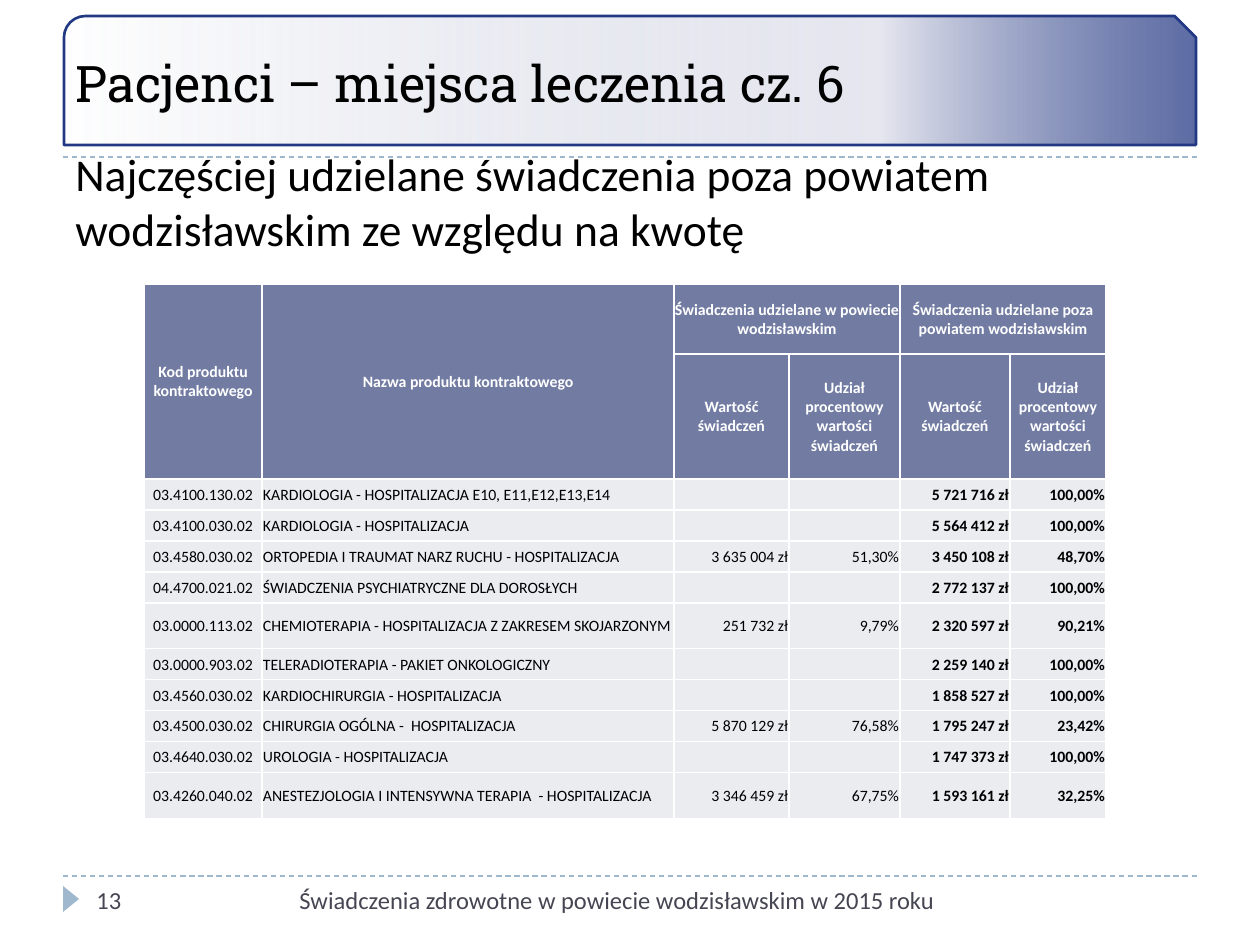
from dataclasses import dataclass

from lxml import etree
from pptx import Presentation
from pptx import util as u
from pptx.dml.color import RGBColor
from pptx.enum import dml, shapes, text
from pptx.oxml import ns

PX_PER_INCH = 126


@dataclass(frozen=True)
class Theme:
    body_font: str = "Calibri"
    title_font: str = "Roboto Slab"
    black: str = "000000"
    white: str = "FFFFFF"
    muted: str = "464653"
    accent: str = "9FB8CD"
    navy: str = "233883"
    header: str = "727CA3"
    row: str = "EBECF0"
    title_size: float = 28.8
    lead_size: float = 26
    footer_size: float = 14
    table_size: float = 9


THEME = Theme()
LEFT, CENTER, RIGHT = text.PP_ALIGN.LEFT, text.PP_ALIGN.CENTER, text.PP_ALIGN.RIGHT

# position, stop colour, opacity (all in percent)
BANNER_STOPS = [(0, THEME.navy, 73), (28, "E6E7EF", 100), (100, "CCD0E0", 0)]

COLUMN_WIDTHS = [118, 412, 115, 111, 110, 96]
HEADER_HEIGHTS = [70, 125]
ROW_HEIGHT, TALL_ROW_HEIGHT = 31, 46
TALL_CODES = {"03.0000.113.02", "03.4260.040.02"}
VALUE, SHARE = "Wartość świadczeń", "Udział procentowy wartości świadczeń"
# row, column, last row, last column, wording
HEADERS = [
    (0, 0, 1, 0, "Kod produktu kontraktowego"),
    (0, 1, 1, 1, "Nazwa produktu kontraktowego"),
    (0, 2, 0, 3, "Świadczenia udzielane w powiecie wodzisławskim"),
    (0, 4, 0, 5, "Świadczenia udzielane poza powiatem wodzisławskim"),
    (1, 2, 1, 2, VALUE),
    (1, 3, 1, 3, SHARE),
    (1, 4, 1, 4, VALUE),
    (1, 5, 1, 5, SHARE),
]
SERVICES = [
    ("03.4100.130.02", "KARDIOLOGIA - HOSPITALIZACJA E10, E11,E12,E13,E14", "", "", "5 721 716 zł", "100,00%"),
    ("03.4100.030.02", "KARDIOLOGIA - HOSPITALIZACJA", "", "", "5 564 412 zł", "100,00%"),
    ("03.4580.030.02", "ORTOPEDIA I TRAUMAT NARZ RUCHU - HOSPITALIZACJA",
     "3 635 004 zł", "51,30%", "3 450 108 zł", "48,70%"),
    ("04.4700.021.02", "ŚWIADCZENIA PSYCHIATRYCZNE DLA DOROSŁYCH", "", "", "2 772 137 zł", "100,00%"),
    ("03.0000.113.02", "CHEMIOTERAPIA - HOSPITALIZACJA Z ZAKRESEM SKOJARZONYM",
     "251 732 zł", "9,79%", "2 320 597 zł", "90,21%"),
    ("03.0000.903.02", "TELERADIOTERAPIA - PAKIET ONKOLOGICZNY", "", "", "2 259 140 zł", "100,00%"),
    ("03.4560.030.02", "KARDIOCHIRURGIA - HOSPITALIZACJA", "", "", "1 858 527 zł", "100,00%"),
    ("03.4500.030.02", "CHIRURGIA OGÓLNA -  HOSPITALIZACJA",
     "5 870 129 zł", "76,58%", "1 795 247 zł", "23,42%"),
    ("03.4640.030.02", "UROLOGIA - HOSPITALIZACJA", "", "", "1 747 373 zł", "100,00%"),
    ("03.4260.040.02", "ANESTEZJOLOGIA I INTENSYWNA TERAPIA  - HOSPITALIZACJA",
     "3 346 459 zł", "67,75%", "1 593 161 zł", "32,25%"),
]
COLUMN_ALIGNS = [CENTER, LEFT, RIGHT, RIGHT, RIGHT, RIGHT]
FIRST_BOLD_COLUMN = 4


def px(length):
    return u.Emu(round(length * 914400 / PX_PER_INCH))


def rgb(color):
    return RGBColor.from_string(color)


def add_xml(parent, tag, **attributes):
    return etree.SubElement(parent, ns.qn(tag), {k: str(v) for k, v in attributes.items()})


def write(frame, wording, size, color, font=THEME.body_font, align=LEFT, bold=False):
    para = frame.paragraphs[0]
    para.alignment = align
    span = para.add_run()
    span.text = wording
    span.font.name, span.font.size, span.font.bold = font, u.Pt(size), bold
    span.font.color.rgb = rgb(color)
    return para


def add_text(page, place, wording, size, color, align=LEFT):
    box = page.shapes.add_textbox(*map(px, place))
    box.text_frame.word_wrap = True
    return write(box.text_frame, wording, size, color, align=align)


def add_rule(page, y):
    rule = page.shapes.add_connector(shapes.MSO_CONNECTOR.STRAIGHT, px(63), px(y), px(1197), px(y))
    rule.line.color.rgb = rgb(THEME.accent)
    rule.line.width = u.Pt(0.75)
    rule.line.dash_style = dml.MSO_LINE.DASH
    add_xml(rule.element.spPr, "a:effectLst")


def add_marker(page):
    marker = page.shapes.add_shape(shapes.MSO_SHAPE.ISOSCELES_TRIANGLE, *map(px, (58, 891, 26, 16)))
    marker.rotation = 90
    marker.shadow.inherit = False
    marker.fill.solid()
    marker.fill.fore_color.rgb = rgb(THEME.accent)
    marker.line.fill.background()


def add_banner(page):
    banner = page.shapes.add_shape(shapes.MSO_SHAPE.SNIP_ROUND_RECTANGLE, *map(px, (64, 16, 1132, 129)))
    banner.shadow.inherit = False
    banner.line.color.rgb = rgb(THEME.navy)
    banner.line.width = u.Pt(1.5)
    banner.fill.gradient()
    gradient = banner.element.spPr.find(ns.qn("a:gradFill"))
    for child in list(gradient):
        gradient.remove(child)
    stops = add_xml(gradient, "a:gsLst")
    for position, color, opacity in BANNER_STOPS:
        stop = add_xml(stops, "a:gs", pos=position * 1000)
        add_xml(add_xml(stop, "a:srgbClr", val=color), "a:alpha", val=opacity * 1000)
    add_xml(gradient, "a:lin", ang=180 * 60000, scaled=0)
    return banner


def place_title(page, banner, wording):
    """Format the title placeholder and stack it above the banner."""
    title = page.shapes.title
    title.left, title.top, title.width, title.height = map(px, (63, 66, 1134, 89))
    frame = title.text_frame
    frame.word_wrap = True
    frame.auto_size = text.MSO_AUTO_SIZE.NONE
    frame.vertical_anchor = text.MSO_ANCHOR.BOTTOM
    frame.margin_top, frame.margin_bottom = 0, px(42)
    write(frame, wording, THEME.title_size, THEME.black, THEME.title_font)
    banner.element.addnext(title.element)


def fill_cell(cell, wording, fill, color, align, bold):
    cell.margin_left = cell.margin_right = cell.margin_top = px(1)
    cell.margin_bottom = 0
    cell.vertical_anchor = text.MSO_ANCHOR.MIDDLE
    properties = cell._tc.get_or_add_tcPr()
    for side in "LRTB":
        border = add_xml(properties, f"a:ln{side}", w=u.Pt(1))
        add_xml(add_xml(border, "a:solidFill"), "a:srgbClr", val=THEME.white)
    cell.fill.solid()
    cell.fill.fore_color.rgb = rgb(fill)
    if wording:
        write(cell.text_frame, wording, THEME.table_size, color, align=align, bold=bold)
    else:
        # Keeps an empty cell from stretching its row
        add_xml(cell.text_frame.paragraphs[0]._p, "a:endParaRPr", sz=int(THEME.table_size * 100))


def add_services_table(page):
    heights = HEADER_HEIGHTS + [
        TALL_ROW_HEIGHT if service[0] in TALL_CODES else ROW_HEIGHT for service in SERVICES]
    place = (144, 284, sum(COLUMN_WIDTHS), sum(heights))
    table = page.shapes.add_table(len(heights), len(COLUMN_WIDTHS), *map(px, place)).table
    table.first_row = table.horz_banding = False
    for column, width in zip(table.columns, COLUMN_WIDTHS):
        column.width = px(width)
    for row, height in zip(table.rows, heights):
        row.height = px(height)

    wordings = {(top, left): wording for top, left, _, _, wording in HEADERS}
    for row in range(len(HEADER_HEIGHTS)):
        for column in range(len(COLUMN_WIDTHS)):
            fill_cell(table.cell(row, column), wordings.get((row, column), ""),
                      THEME.header, THEME.white, CENTER, True)
    for top, left, bottom, right, _ in HEADERS:
        if (top, left) != (bottom, right):
            table.cell(top, left).merge(table.cell(bottom, right))
    for row, service in enumerate(SERVICES, len(HEADER_HEIGHTS)):
        for column, wording in enumerate(service):
            fill_cell(table.cell(row, column), wording, THEME.row, THEME.black,
                      COLUMN_ALIGNS[column], column >= FIRST_BOLD_COLUMN)


def main():
    deck = Presentation()
    deck.slide_width, deck.slide_height = u.Inches(10), u.Inches(7.5)
    page = deck.slides.add_slide(deck.slide_layouts[5])
    for y in (876, 157):
        add_rule(page, y)
    add_marker(page)
    lead = add_text(page, (63, 140, 1134, 680),
                    "Najczęściej udzielane świadczenia poza powiatem wodzisławskim ze względu na kwotę",
                    THEME.lead_size, THEME.black)
    lead.space_before = u.Pt(6)
    banner = add_banner(page)
    place_title(page, banner, "Pacjenci – miejsca leczenia cz. 6")
    add_text(page, (84, 879, 273, 50), "13", THEME.footer_size, THEME.muted)
    add_text(page, (273, 879, 674, 50), "Świadczenia zdrowotne w powiecie wodzisławskim w 2015 roku",
             THEME.footer_size, THEME.muted, RIGHT)
    add_services_table(page)
    deck.save("out.pptx")


if __name__ == "__main__":
    main()
